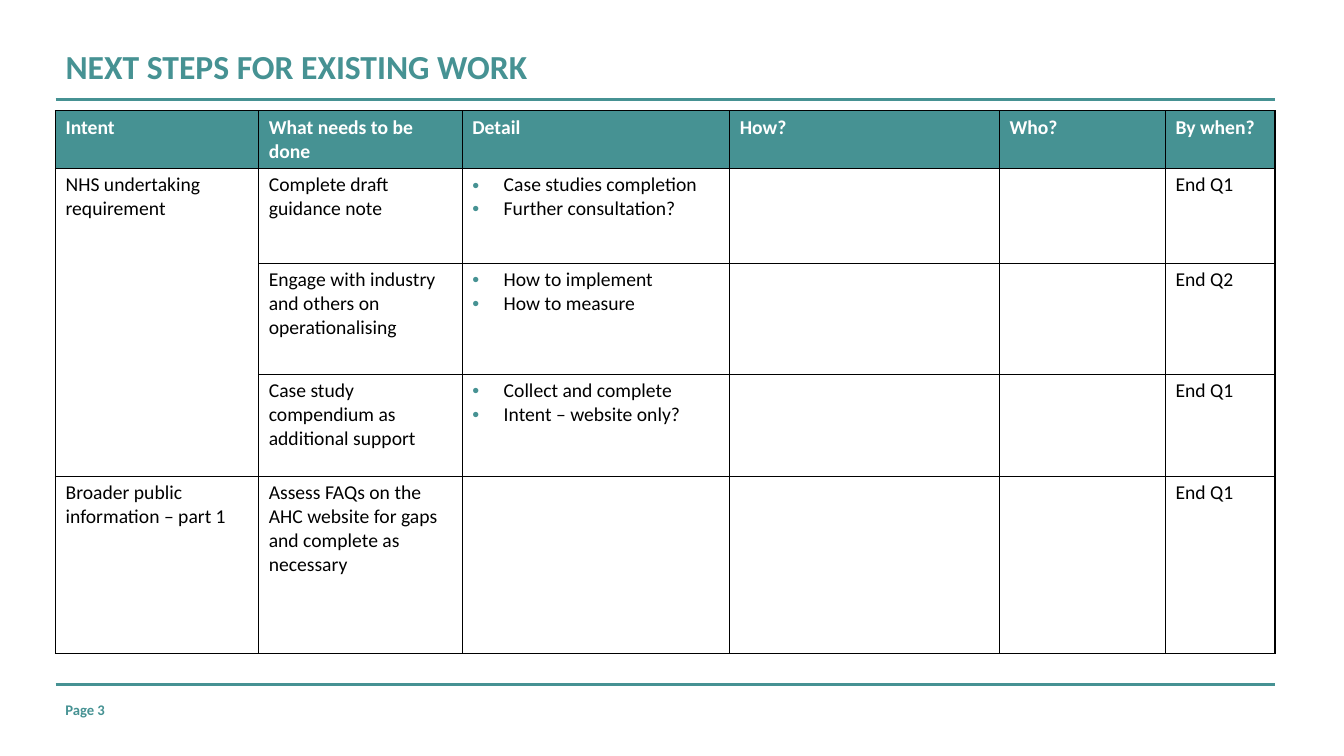
import dataclasses

import pptx
import pptx.dml.color
import pptx.enum.shapes
import pptx.enum.text
import pptx.oxml
import pptx.oxml.ns
import pptx.util

Cm = pptx.util.Cm
Pt = pptx.util.Pt
Anchor = pptx.enum.text.MSO_ANCHOR


@dataclasses.dataclass(frozen=True)
class Theme:
    font: str = "Calibri"
    teal: str = "469293"
    white: str = "FFFFFF"
    black: str = "000000"
    title_size: float = 24
    table_size: float = 14
    page_size: float = 10.5
    rule_width: float = 2.25
    border_width: float = 1


THEME = Theme()

# Shared page edges
LEFT = Cm(1.4)
CONTENT_WIDTH = Cm(30.73)

# Table content: a list in a cell stands for bullets
COLUMN_WIDTHS = (5.12, 5.13, 6.74, 6.8, 4.18, 2.76)
ROW_HEIGHTS = (1.45, 2.39, 2.8, 2.57, 4.47)
ROWS = (
    ("Intent", "What needs to be done", "Detail", "How?", "Who?", "By when?"),
    ("NHS undertaking requirement", "Complete draft guidance note",
     ["Case studies completion", "Further consultation?"], "", "", "End Q1"),
    ("", "Engage with industry and others on operationalising",
     ["How to implement", "How to measure"], "", "", "End Q2"),
    ("", "Case study compendium as additional support",
     ["Collect and complete", "Intent – website only?"], "", "", "End Q1"),
    ("Broader public information – part 1",
     "Assess FAQs on the AHC website for gaps and complete as necessary",
     "", "", "", "End Q1"),
)


def rgb(colour):
    return pptx.dml.color.RGBColor.from_string(colour)


def xml_element(text):
    return pptx.oxml.parse_xml(
        text.replace(" ", f" {pptx.oxml.ns.nsdecls('a')} ", 1))


def format_paragraph(paragraph, size, colour, bold=False):
    formats = {"name": THEME.font, "size": Pt(size), "bold": bold}
    for run in paragraph.runs:
        for name, value in formats.items():
            setattr(run.font, name, value)
        run.font.color.rgb = rgb(colour)


def add_title(slide, text):
    title = slide.shapes.title
    place = {"left": LEFT, "top": Cm(1.14), "width": Cm(30.48), "height": Cm(1.32)}
    for name, value in place.items():
        setattr(title, name, value)
    frame = title.text_frame
    frame.text = text
    frame.auto_size = pptx.enum.text.MSO_AUTO_SIZE.NONE
    frame.vertical_anchor = Anchor.TOP
    paragraph = frame.paragraphs[0]
    paragraph.alignment = pptx.enum.text.PP_ALIGN.LEFT
    paragraph.line_spacing = 0.9
    format_paragraph(paragraph, THEME.title_size, THEME.teal, True)


def add_page_label(slide, text):
    label = slide.shapes.add_textbox(LEFT, Cm(17.55), Cm(1.78), Cm(0.66))
    frame = label.text_frame
    frame.text = text
    frame.word_wrap = False
    frame.vertical_anchor = Anchor.MIDDLE
    format_paragraph(frame.paragraphs[0], THEME.page_size, THEME.teal, True)


def add_rule(slide, top):
    rule = slide.shapes.add_connector(
        pptx.enum.shapes.MSO_CONNECTOR.STRAIGHT, LEFT, top, LEFT + CONTENT_WIDTH, top)
    rule.line.color.rgb = rgb(THEME.teal)
    rule.line.width = Pt(THEME.rule_width)
    rule._element.spPr.append(xml_element("<a:effectLst />"))


def add_bullet(paragraph):
    properties = paragraph._p.get_or_add_pPr()
    properties.set("marL", str(Cm(0.79)))
    properties.set("indent", str(-Cm(0.79)))
    for text in (
        f'<a:buClr ><a:srgbClr val="{THEME.teal}"/></a:buClr>',
        '<a:buFont typeface="Arial"/>',
        '<a:buChar char="•"/>',
    ):
        properties.append(xml_element(text))


def set_borders(cell):
    properties = cell._tc.get_or_add_tcPr()
    for side in "LRTB":
        properties.append(xml_element(
            f'<a:ln{side} w="{Pt(THEME.border_width)}"><a:solidFill>'
            f'<a:srgbClr val="{THEME.black}"/></a:solidFill></a:ln{side}>'))


def fill_cell(cell, content, is_header):
    set_borders(cell)
    if is_header:
        cell.fill.solid()
        cell.fill.fore_color.rgb = rgb(THEME.teal)
    else:
        cell.fill.background()
    bulleted = isinstance(content, list)
    cell.text = "\n".join(content) if bulleted else content
    colour = THEME.white if is_header else THEME.black
    for paragraph in cell.text_frame.paragraphs:
        if bulleted:
            add_bullet(paragraph)
        format_paragraph(paragraph, THEME.table_size, colour, is_header)


def add_steps_table(slide):
    table = slide.shapes.add_table(
        len(ROWS), len(COLUMN_WIDTHS), LEFT, Cm(2.79),
        CONTENT_WIDTH, Cm(sum(ROW_HEIGHTS))).table
    table.first_row = False
    table.horz_banding = False
    for column, width in zip(table.columns, COLUMN_WIDTHS):
        column.width = Cm(width)
    for row, height in zip(table.rows, ROW_HEIGHTS):
        row.height = Cm(height)
    for row_index, contents in enumerate(ROWS):
        for column_index, content in enumerate(contents):
            fill_cell(table.cell(row_index, column_index), content, row_index == 0)
    # The first intent covers three steps
    table.cell(1, 0).merge(table.cell(3, 0))


def main():
    presentation = pptx.Presentation()
    presentation.slide_width = Cm(33.87)
    presentation.slide_height = Cm(19.05)
    slide = presentation.slides.add_slide(presentation.slide_layouts[5])

    # Heading and footer
    add_title(slide, "NEXT STEPS FOR EXISTING WORK")
    for top in (Cm(2.51), Cm(17.25)):
        add_rule(slide, top)
    add_page_label(slide, "Page 3")

    # Work plan
    add_steps_table(slide)
    presentation.save("out.pptx")


if __name__ == "__main__":
    main()
